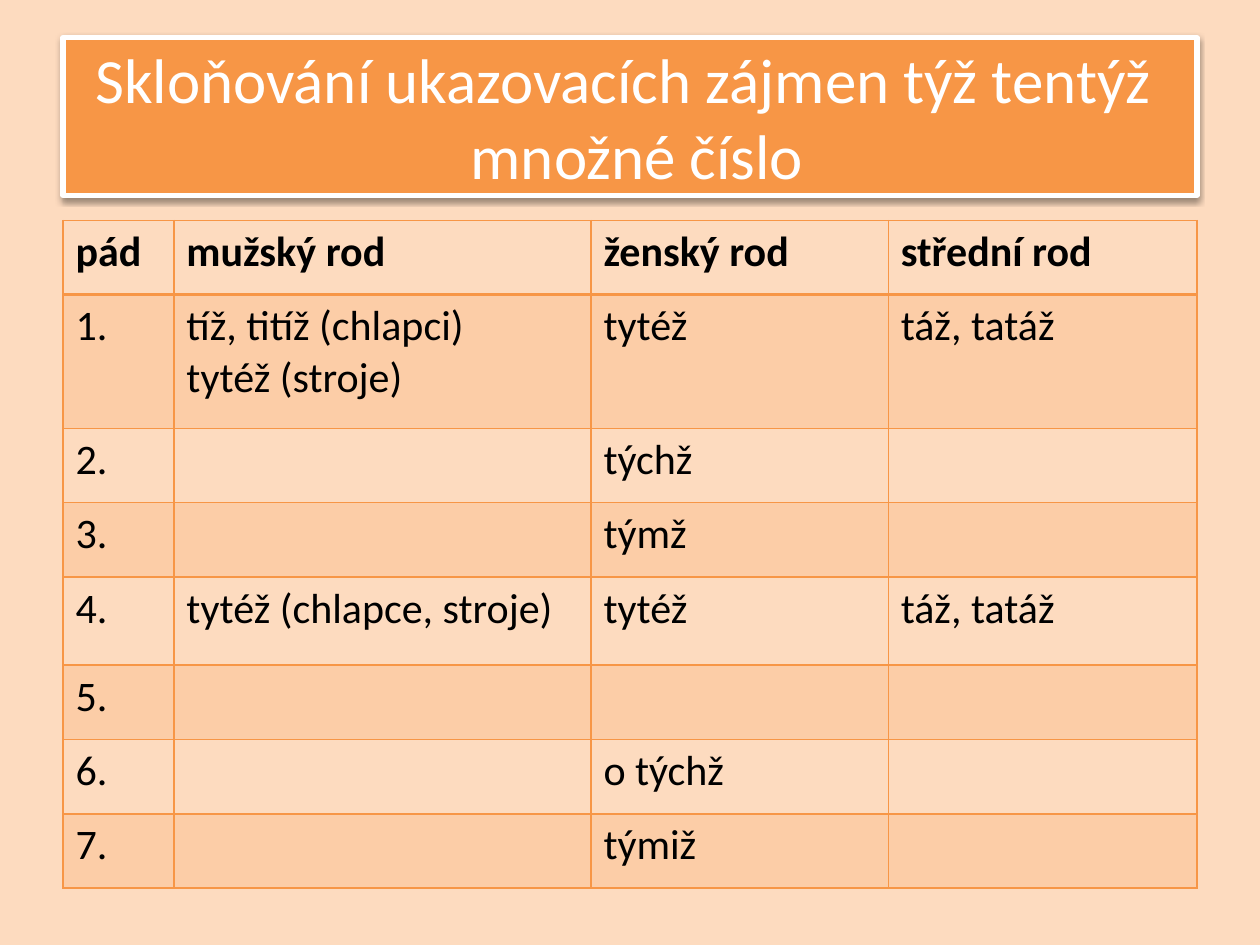
"""Build a slide with the plural declension of the Czech pronouns týž and tentýž."""
from lxml import etree
from pptx import Presentation, util as u
from pptx.dml.color import RGBColor
from pptx.enum import shapes, text
from pptx.oxml import parse_xml
from pptx.oxml.ns import nsdecls, qn

ORANGE, PEACH, BAND = "F79646", "FDDBBF", "FCCDA7"
COLUMNS = [0.88, 3.31, 2.36, 2.45]
ROWS = [0.59, 1.06, 0.59, 0.59, 0.7, 0.59, 0.59, 0.59]
CASES = [
    ["pád", "mužský rod", "ženský rod", "střední rod"],
    ["1.", "tíž, titíž (chlapci)\ntytéž (stroje)", "tytéž", "táž, tatáž"],
    ["2.", "", "týchž", ""],
    ["3.", "", "týmž", ""],
    ["4.", "tytéž (chlapce, stroje)", "tytéž", "táž, tatáž"],
    ["5.", "", "", ""],
    ["6.", "", "o týchž", ""],
    ["7.", "", "týmiž", ""],
]


def color(value):
    return RGBColor.from_string(value)


def add_span(para, words, size, ink, bold=False):
    span = para.add_run()
    span.text = words
    span.font.name = "Calibri"
    span.font.size = u.Pt(size)
    span.font.bold = bold
    span.font.color.rgb = color(ink)


deck = Presentation()
deck.slide_width, deck.slide_height = u.Inches(10), u.Inches(7.5)
page = deck.slides.add_slide(deck.slide_layouts[6])
page.background.fill.solid()
page.background.fill.fore_color.rgb = color(PEACH)
margin = deck.slide_width // 20
content_width = deck.slide_width - 2 * margin

title = page.shapes.add_shape(
    shapes.MSO_SHAPE.RECTANGLE, margin, u.Inches(0.3), content_width, u.Inches(1.25))
title.fill.solid()
title.fill.fore_color.rgb = color(ORANGE)
title.line.color.rgb = color("FFFFFF")
title.line.width = u.Pt(3)
title.shadow.inherit = False
effects = title.element.spPr.find(qn("a:effectLst"))
effects.append(parse_xml(
    f'<a:outerShdw {nsdecls("a")} blurRad="{u.Pt(3.1)}" dist="{u.Pt(1.6)}" '
    'dir="5400000" rotWithShape="0"><a:srgbClr val="000000">'
    '<a:alpha val="38000"/></a:srgbClr></a:outerShdw>'))
title.text_frame.word_wrap = True
title.text_frame.vertical_anchor = text.MSO_ANCHOR.MIDDLE
para = title.text_frame.paragraphs[0]
para.alignment = text.PP_ALIGN.CENTER
add_span(para, "Skloňování ukazovacích zájmen týž tentýž ", 36, "FFFFFF")
para.add_line_break()
add_span(para, " množné číslo", 36, "FFFFFF")

table = page.shapes.add_table(
    len(ROWS), len(COLUMNS), margin, u.Inches(1.75), content_width, u.Inches(sum(ROWS))).table
for column, width in zip(table.columns, COLUMNS):
    column.width = u.Inches(width)
for row, height in zip(table.rows, ROWS):
    row.height = u.Inches(height)

for r, words in enumerate(CASES):
    for c, entry in enumerate(words):
        cell = table.cell(r, c)
        properties = cell._tc.get_or_add_tcPr()
        for side in "LRTB":
            heavy = (r, side) in [(0, "B"), (1, "T")]
            border = etree.SubElement(properties, qn(f"a:ln{side}"), w=str(u.Pt(2 if heavy else 1)))
            paint = etree.SubElement(border, qn("a:solidFill"))
            etree.SubElement(paint, qn("a:srgbClr"), val=ORANGE)
        if r % 2:
            cell.fill.solid()
            cell.fill.fore_color.rgb = color(BAND)
        else:
            cell.fill.background()
        for i, line in enumerate(entry.split("\n") if entry else []):
            para = cell.text_frame.add_paragraph() if i else cell.text_frame.paragraphs[0]
            add_span(para, line, 24, "000000", bold=r == 0)

deck.save("out.pptx")
